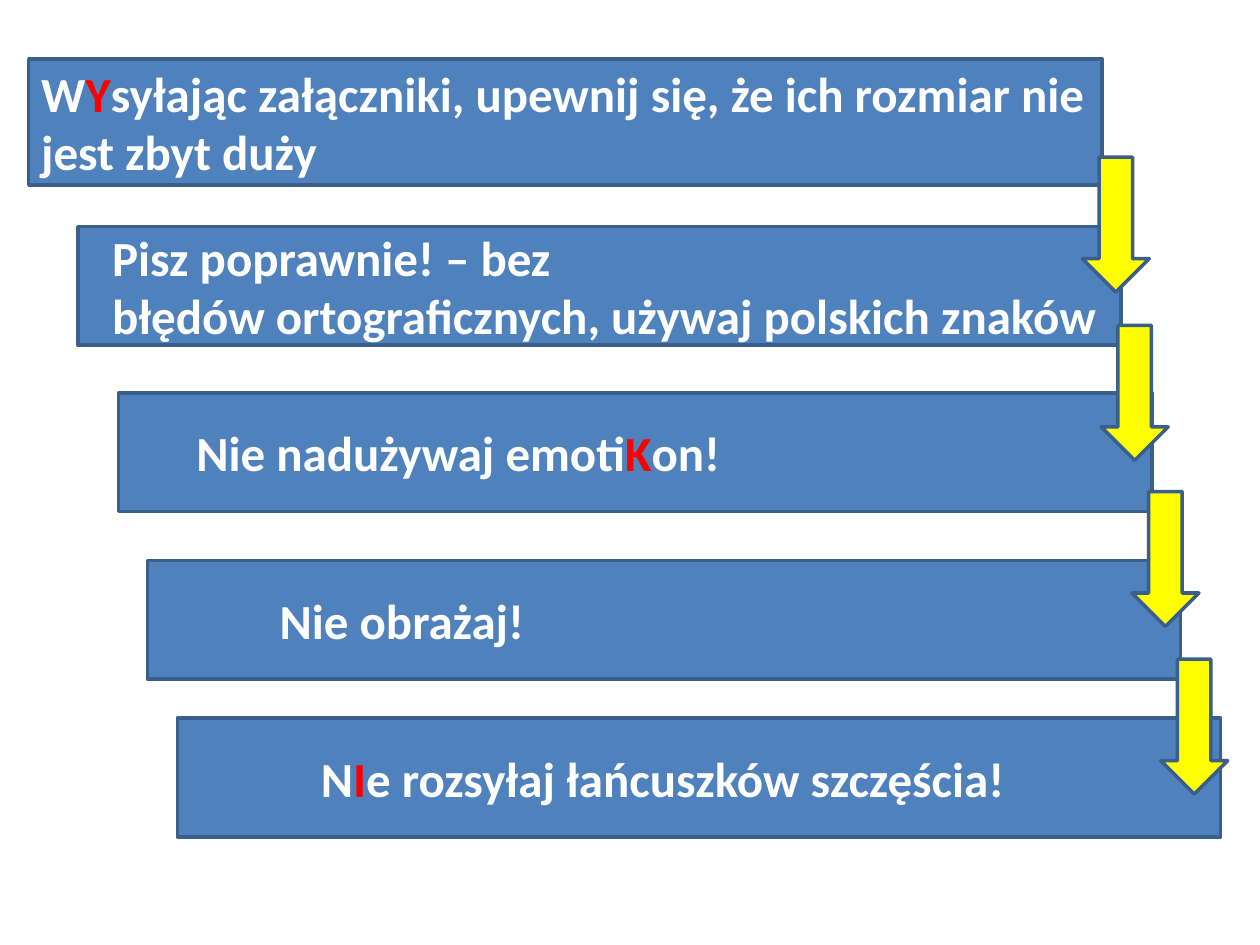
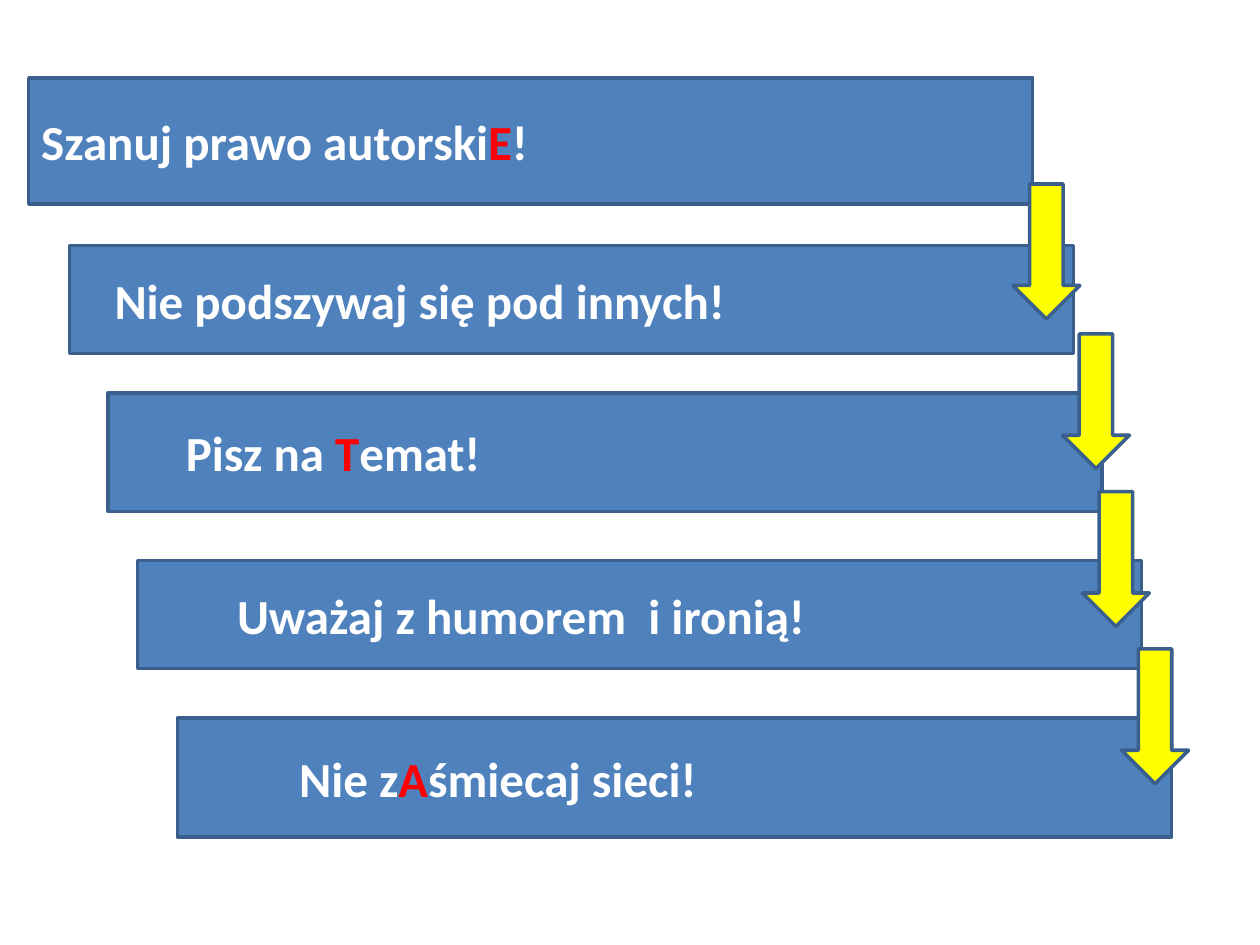
from pptx import Presentation
from pptx.dml.color import RGBColor
from pptx.enum.shapes import MSO_SHAPE
from pptx.enum.text import MSO_ANCHOR, PP_ALIGN
from pptx.util import Cm, Pt

# Each bar: left, top, width, height, text indent in steps, lines.
# Text between two "|" signs is highlighted.
SLIDES = [
    [
        (0.58, 1.19, 21.64, 2.54, 0,
         ["W|Y|syłając załączniki, upewnij się, że ich rozmiar nie",
          "jest zbyt duży"]),
        (1.57, 4.57, 21.03, 2.39, 2,
         ["Pisz poprawnie! – bez",
          "błędów ortograficznych, używaj polskich znaków"]),
        (2.39, 7.92, 20.83, 2.39, 6, ["Nie nadużywaj emoti|K|on!"]),
        (2.97, 11.3, 20.83, 2.39, 11, ["Nie obrażaj!"]),
        (3.58, 14.48, 21.03, 2.39, 12,
         ["N|I|e rozsyłaj łańcuszków szczęścia!"]),
    ],
    [
        (0.58, 1.57, 20.24, 2.54, 0, ["Szanuj prawo autorski|E|!"]),
        (1.4, 4.95, 20.24, 2.18, 3, ["Nie podszywaj się pod innych!"]),
        (2.18, 7.92, 20.04, 2.39, 6, ["Pisz na |T|emat!"]),
        (2.77, 11.3, 20.24, 2.18, 8, ["Uważaj z humorem  i ironią!"]),
        (3.58, 14.48, 20.04, 2.39, 10, ["Nie z|A|śmiecaj sieci!"]),
    ],
]
# Arrows moved from the common overlap: (slide, bar) -> (right, down)
NUDGES = {(0, 0): (0, -0.16), (1, 1): (0.18, 0)}

BLUE, EDGE, YELLOW = "4F81BD", "3A5F8C", "FFFF00"
WHITE, RED = "FFFFFF", "FF0000"
STEP = 0.22
OVERLAP = 0.4
ARROW = (1.35, 2.72)


def paint(fill, color):
    fill.solid()
    fill.fore_color.rgb = RGBColor.from_string(color)


def add_block(slide, kind, box, color):
    shape = slide.shapes.add_shape(kind, *[Cm(v) for v in box])
    shape.shadow.inherit = False
    paint(shape.fill, color)
    paint(shape.line.fill, EDGE)
    shape.line.width = Pt(2)
    return shape


def write(shape, lines, indent):
    frame = shape.text_frame
    frame.word_wrap = True
    frame.vertical_anchor = MSO_ANCHOR.MIDDLE
    frame.margin_left = Cm(0.25 + indent * STEP)
    for i, line in enumerate(lines):
        para = frame.add_paragraph() if i else frame.paragraphs[0]
        para.alignment = PP_ALIGN.LEFT
        for j, part in enumerate(line.split("|")):
            run = para.add_run()
            run.text = part
            font = run.font
            font.name, font.size, font.bold = "Calibri", Pt(28), True
            paint(font.fill, RED if j % 2 else WHITE)


def add_stairs(slide, index, bars):
    for *box, indent, lines in bars:
        bar = add_block(slide, MSO_SHAPE.RECTANGLE, box, BLUE)
        write(bar, lines, indent)
    for i, (left, top, width, height, *_) in enumerate(bars[:-1]):
        right, down = NUDGES.get((index, i), (0, 0))
        x = left + width - OVERLAP + right
        y = top + height - OVERLAP + down
        add_block(slide, MSO_SHAPE.DOWN_ARROW, (x, y, *ARROW), YELLOW)


def main():
    deck = Presentation()
    deck.slide_width, deck.slide_height = Cm(25.4), Cm(19.05)
    for index, bars in enumerate(SLIDES):
        slide = deck.slides.add_slide(deck.slide_layouts[6])
        paint(slide.background.fill, WHITE)
        add_stairs(slide, index, bars)
    deck.save("out.pptx")


if __name__ == "__main__":
    main()
